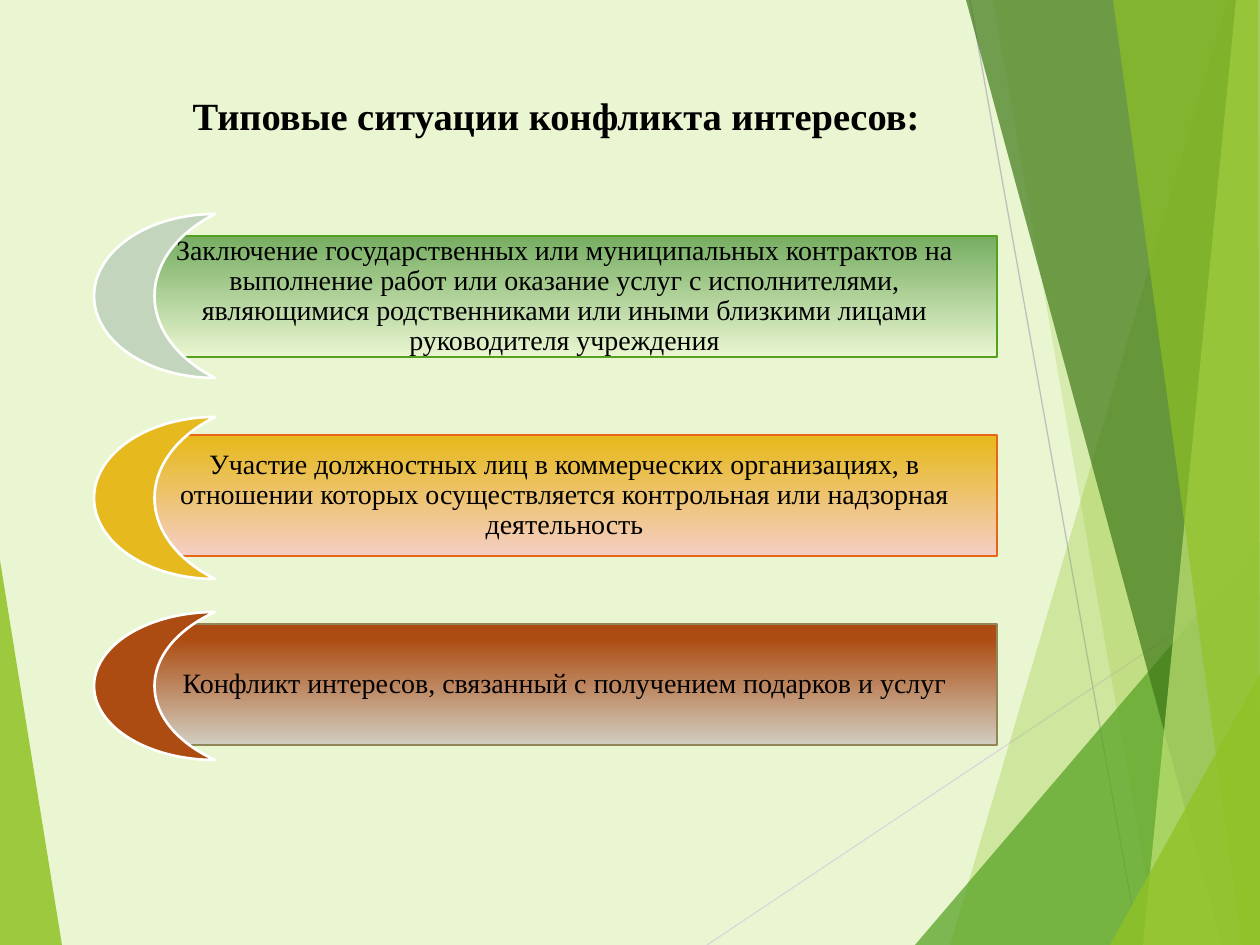
from lxml import etree
from pptx import Presentation
from pptx.dml.color import RGBColor
from pptx.enum.shapes import MSO_CONNECTOR, MSO_SHAPE
from pptx.enum.text import MSO_ANCHOR, PP_ALIGN
from pptx.oxml.ns import qn
from pptx.util import Pt

PX = 914400 / 126  # EMU per px
FONT = "Times New Roman"
LINE = MSO_CONNECTOR.STRAIGHT
MOON, PLATE = MSO_SHAPE.MOON, MSO_SHAPE.PENTAGON
CENTER, MIDDLE, TOP = PP_ALIGN.CENTER, MSO_ANCHOR.MIDDLE, MSO_ANCHOR.TOP

COLORS = {
    "bg": "EAF6D1", "text": "000000", "white": "FFFFFF",
    "lime": "90C226", "green": "54A021", "forest": "3F7819", "pale": "C0E474",
    "light_line": "D9D9D9", "grey_line": "BFBFBF",
    "sage": "C3D6BD", "leaf": "76AD61",
    "rose": "F5CEC5", "gold": "E6B91E", "orange": "E76618",
    "sand": "D1CDC0", "rust": "AD4C12", "olive": "918655",
}

# Background facets: colour, opacity in %, corners
FACETS = [
    ("lime", 30, [(1228, 0), (950, 945), (1260, 945), (1260, 0)]),
    ("lime", 20, [(993, 0), (1158, 945), (1260, 945), (1260, 0)]),
    ("green", 72, [(915, 945), (1260, 541), (1260, 945)]),
    ("forest", 70, [(966, 0), (1222, 945), (1260, 945), (1260, 0)]),
    ("pale", 70, [(1236, 0), (1143, 945), (1260, 945), (1260, 0)]),
    ("lime", 65, [(1113, 0), (1242, 945), (1260, 945), (1258, 0)]),
    ("lime", 80, [(1110, 945), (1260, 674), (1260, 945)]),
]

# Situations: bar top, moon top, moon height, moon colour,
# bar gradient (start, end, end position), bar outline, text
SITUATIONS = [
    (236, 214, 164, "sage", ("bg", "leaf", 1), "green",
     "Заключение государственных или муниципальных контрактов на выполнение "
     "работ или оказание услуг с исполнителями, являющимися родственниками "
     "или иными близкими лицами руководителя учреждения"),
    (435, 417, 162, "gold", ("rose", "gold", 0.97), "orange",
     "Участие должностных лиц в коммерческих организациях, в отношении которых "
     "осуществляется контрольная или надзорная деятельность"),
    (624, 612, 148, "rust", ("sand", "rust", 0.88), "olive",
     "Конфликт интересов, связанный с получением подарков и услуг"),
]
LEFT, BAR_W, BAR_H, MOON_W = 94, 903, 121, 121


def px(*values):
    return [round(v * PX) for v in values]


def rgb(name):
    return RGBColor.from_string(COLORS[name])


def add_facet(s, color, opacity, points):
    start, *rest = points
    builder = s.shapes.build_freeform(*start, scale=PX)
    builder.add_line_segments(rest, close=True)
    sp = builder.convert_to_shape()
    sp.shadow.inherit = False
    sp.fill.solid()
    sp.fill.fore_color.rgb = rgb(color)
    sp.line.fill.background()
    clr = sp._element.spPr.find(qn("a:solidFill"))[0]
    etree.SubElement(clr, qn("a:alpha"), val=str(opacity * 1000))


def add_line(s, color, *ends):
    c = s.shapes.add_connector(LINE, *px(*ends))
    c.line.color.rgb = rgb(color)
    c.line.width = Pt(0.75)
    etree.SubElement(c._element.spPr, qn("a:effectLst"))


def add_preset(s, kind, box, line, width):
    sp = s.shapes.add_shape(kind, *px(*box))
    sp.shadow.inherit = False
    sp.line.color.rgb = rgb(line)
    sp.line.width = Pt(width)
    return sp


def write_text(tf, text, size, anchor, bold=False):
    tf.word_wrap = True
    tf.vertical_anchor = anchor
    p = tf.paragraphs[0]
    p.alignment = CENTER
    r = p.add_run()
    r.text = text
    r.font.name = FONT
    r.font.size = Pt(size)
    r.font.bold = bold
    r.font.color.rgb = rgb("text")
    return p


def add_bar(s, top, gradient, line):
    start, end, end_position = gradient
    sp = add_preset(s, PLATE, (LEFT, top, BAR_W, BAR_H), line, 1)
    sp.rotation = 180
    sp.fill.gradient()
    sp.fill.gradient_angle = 270
    stops = zip(sp.fill.gradient_stops, (start, end), (0, end_position))
    for stop, color, position in stops:
        stop.color.rgb = rgb(color)
        stop.position = position


def add_bar_text(s, top, text):
    tf = s.shapes.add_textbox(*px(LEFT, top, BAR_W, BAR_H)).text_frame
    tf.margin_left, tf.margin_top, tf.margin_right, tf.margin_bottom = px(53, 9, 15, 9)
    write_text(tf, text, 16, MIDDLE).line_spacing = 0.9


def add_moon(s, top, height, color):
    sp = add_preset(s, MOON, (LEFT, top, MOON_W, height), "white", 1.5)
    sp.fill.solid()
    sp.fill.fore_color.rgb = rgb(color)


def add_title(s, text):
    sp = s.shapes.title
    sp.left, sp.top, sp.width, sp.height = px(144, 86, 824, 79)
    write_text(sp.text_frame, text, 22, TOP, bold=True)


def main():
    prs = Presentation()
    prs.slide_width, prs.slide_height = px(1260, 945)
    s = prs.slides.add_slide(prs.slide_layouts[5])
    s.background.fill.solid()
    s.background.fill.fore_color.rgb = rgb("bg")

    # Background decoration
    add_facet(s, "lime", 85, [(0, 560), (62, 945), (0, 945)])
    add_line(s, "light_line", 707, 945, 1260, 576)
    add_line(s, "grey_line", 970, 0, 1139, 945)
    for facet in FACETS:
        add_facet(s, *facet)

    add_title(s, "Типовые ситуации конфликта интересов:")

    # Situations: bar, text, moon
    for top, moon_top, moon_h, moon_color, gradient, line, text in SITUATIONS:
        add_bar(s, top, gradient, line)
        add_bar_text(s, top, text)
        add_moon(s, moon_top, moon_h, moon_color)

    prs.save("out.pptx")


if __name__ == "__main__":
    main()
